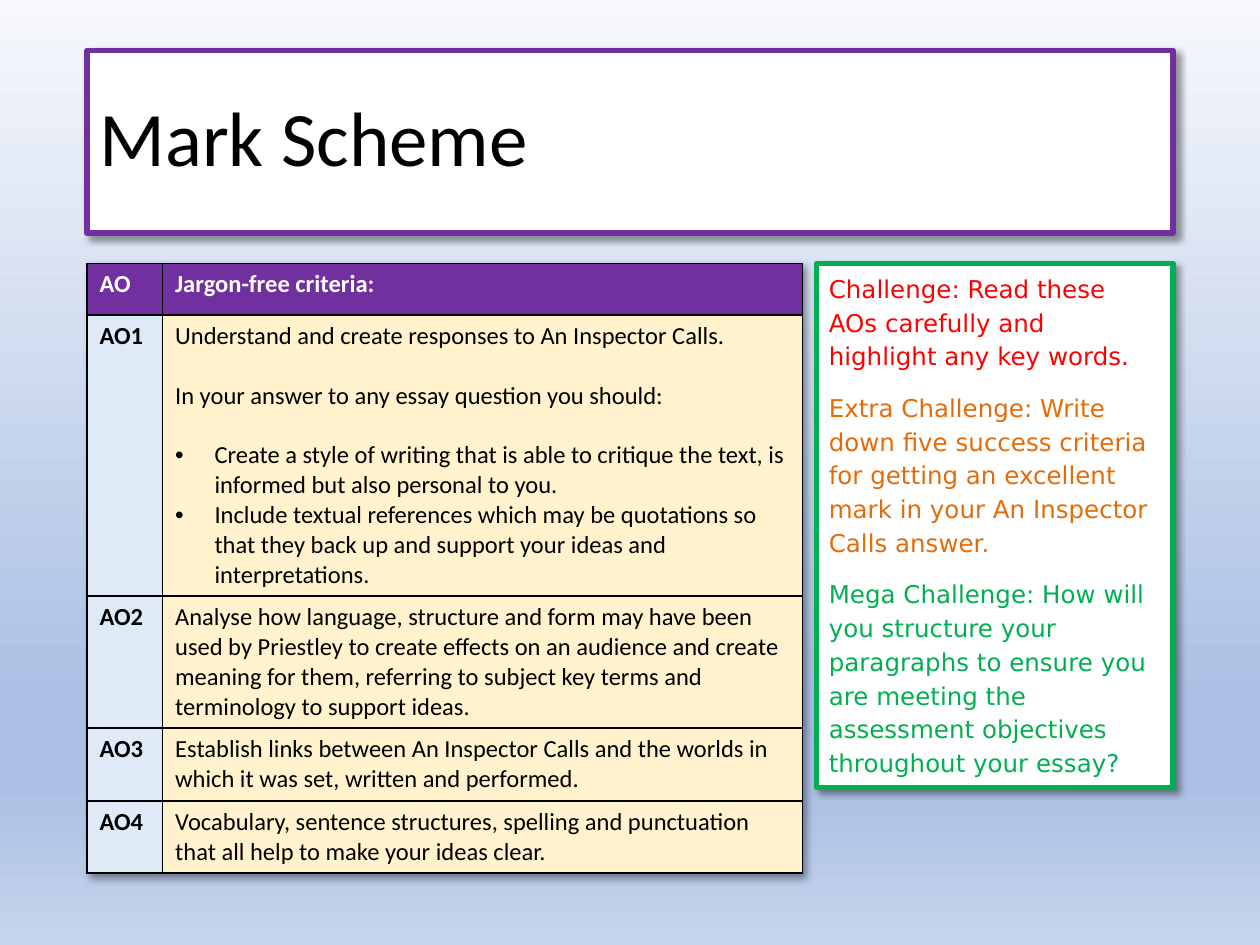
import pptx
import pptx.util
import pptx.oxml
import pptx.oxml.ns
import pptx.dml.color
import pptx.enum.shapes
import pptx.enum.text

Pt = pptx.util.Pt
ANCHOR = pptx.enum.text.MSO_ANCHOR
COLORS = {
    "black": "000000", "white": "FFFFFF", "purple": "7030A0", "green": "00B050",
    "red": "FF0000", "orange": "E36C0A", "label": "DEEBF7", "criteria": "FFF2CC",
}
BACKGROUND = [(0, "F6F8FC"), (74, "ABC0E4"), (83, "ABC0E4"), (100, "C7D5ED")]
COLUMNS, ROWS = 100, 75
LEFT, RIGHT, BODY_TOP = 6.9, 93.1, 20.9
SIDE_LEFT = 64.8

CRITERIA = [
    ("AO", ["Jargon-free criteria:"], 4.1),
    ("AO1", [
        "Understand and create responses to An Inspector Calls.",
        "In your answer to any essay question you should:",
        "• Create a style of writing that is able to critique the text, is informed "
        "but also personal to you.",
        "• Include textual references which may be quotations so that they back up "
        "and support your ideas and interpretations.",
    ], 22.3),
    ("AO2", ["Analyse how language, structure and form may have been used by Priestley to "
             "create effects on an audience and create meaning for them, referring to "
             "subject key terms and terminology to support ideas."], 10.4),
    ("AO3", ["Establish links between An Inspector Calls and the worlds in which it was "
             "set, written and performed."], 5.8),
    ("AO4", ["Vocabulary, sentence structures, spelling and punctuation that all help to "
             "make your ideas clear."], 5.7),
]
CHALLENGES = [
    ("Challenge: Read these AOs carefully and highlight any key words.", "red"),
    ("Extra Challenge: Write down five success criteria for getting an excellent mark in "
     "your An Inspector Calls answer.", "orange"),
    ("Mega Challenge: How will you structure your paragraphs to ensure you are meeting the "
     "assessment objectives throughout your essay?", "green"),
]


def rgb(name):
    return pptx.dml.color.RGBColor.from_string(COLORS[name])


def xml(text):
    """Build a DrawingML element whose root is in the a: namespace."""
    head, rest = text.split(">", 1)
    slash = "/" if head.endswith("/") else ""
    return pptx.oxml.parse_xml(
        f"{head.rstrip('/')} {pptx.oxml.ns.nsdecls('a')}{slash}>{rest}")


def shadow_xml():
    return xml('<a:effectLst><a:outerShdw blurRad="50800" dist="38100" dir="2700000" '
               'algn="tl" rotWithShape="0"><a:srgbClr val="000000"><a:alpha val="40000"/>'
               '</a:srgbClr></a:outerShdw></a:effectLst>')


class Deck:
    def __init__(self):
        self.prs = pptx.Presentation()
        self.prs.slide_width = pptx.util.Inches(10)
        self.prs.slide_height = pptx.util.Inches(7.5)
        self.slide = self.prs.slides.add_slide(self.prs.slide_layouts[6])

    def x(self, columns):
        return round(self.prs.slide_width * columns / COLUMNS)

    def y(self, rows):
        return round(self.prs.slide_height * rows / ROWS)

    def background(self, stops):
        fill = self.slide.background.fill
        fill.gradient()
        fill.gradient_angle = 270
        gs_list = self.slide.element.find(".//" + pptx.oxml.ns.qn("a:gsLst"))
        for stop in list(gs_list):
            gs_list.remove(stop)
        for position, color in stops:
            gs_list.append(xml(f'<a:gs pos="{position * 1000}">'
                               f'<a:srgbClr val="{color}"/></a:gs>'))

    def set_text(self, p, text, size, color, font="Calibri", bold=False):
        p.text = text
        for r in p.runs:
            r.font.size, r.font.name, r.font.bold = Pt(size), font, bold
            r.font.color.rgb = rgb(color)
        p.alignment = pptx.enum.text.PP_ALIGN.LEFT

    def panel(self, left, top, right, height, line, anchor):
        """Add a white, outlined box with a shadow and return its text frame."""
        sp = self.slide.shapes.add_shape(
            pptx.enum.shapes.MSO_SHAPE.RECTANGLE,
            self.x(left), self.y(top), self.x(right - left), self.y(height))
        sp.fill.solid()
        sp.fill.fore_color.rgb = rgb("white")
        sp.line.color.rgb, sp.line.width = rgb(line), Pt(3)
        sp.shadow.inherit = False
        effects = sp.element.spPr.find(pptx.oxml.ns.qn("a:effectLst"))
        effects.append(shadow_xml()[0])
        tf = sp.text_frame
        tf.word_wrap, tf.vertical_anchor = True, anchor
        return tf

    def title(self, text):
        tf = self.panel(LEFT, 4, RIGHT, 14.5, "purple", ANCHOR.MIDDLE)
        self.set_text(tf.paragraphs[0], text, 44, "black")
        tf.paragraphs[0].line_spacing = 0.9

    def challenges(self, items):
        tf = self.panel(SIDE_LEFT, BODY_TOP, RIGHT, 41.6, "green", ANCHOR.TOP)
        for i, (text, color) in enumerate(items):
            p = tf.add_paragraph() if i else tf.paragraphs[0]
            self.set_text(p, text, 14, color, "DejaVu Sans")
            p.line_spacing, p.space_after = 1.15, Pt(10)

    def cell(self, cell, texts, fill, color, bold):
        cell.fill.solid()
        cell.fill.fore_color.rgb = rgb(fill)
        for i, text in enumerate(texts):
            p = cell.text_frame.add_paragraph() if i else cell.text_frame.paragraphs[0]
            bullet = text.startswith("• ")
            self.set_text(p, text.removeprefix("• "), 14, color, bold=bold)
            if bullet:
                pPr = p._p.get_or_add_pPr()
                pPr.set("marL", "285750")
                pPr.set("indent", "-285750")
                pPr.append(xml('<a:buFont typeface="Arial"/>'))
                pPr.append(xml('<a:buChar char="•"/>'))
            elif len(texts) > 1:
                p.space_after = Pt(17)
        tcPr = cell._tc.get_or_add_tcPr()
        for i, side in enumerate(("lnL", "lnR", "lnT", "lnB")):
            tcPr.insert(i, xml(f'<a:{side} w="12700"><a:solidFill><a:srgbClr '
                               f'val="{COLORS["black"]}"/></a:solidFill></a:{side}>'))

    def criteria(self, rows, widths=(6, 50.8)):
        height = sum(row[2] for row in rows)
        table = self.slide.shapes.add_table(
            len(rows), len(widths), self.x(LEFT), self.y(BODY_TOP),
            self.x(sum(widths)), self.y(height)).table
        table._tbl.tblPr.insert(0, shadow_xml())
        for column, width in zip(table.columns, widths):
            column.width = self.x(width)
        for i, (label, texts, row_height) in enumerate(rows):
            table.rows[i].height = self.y(row_height)
            header = i == 0
            color = "white" if header else "black"
            self.cell(table.cell(i, 0), [label], "purple" if header else "label", color, True)
            self.cell(table.cell(i, 1), texts, "purple" if header else "criteria",
                      color, header)


def main():
    deck = Deck()
    deck.background(BACKGROUND)
    deck.title("Mark Scheme")
    deck.criteria(CRITERIA)
    deck.challenges(CHALLENGES)
    deck.prs.save("out.pptx")


if __name__ == "__main__":
    main()
